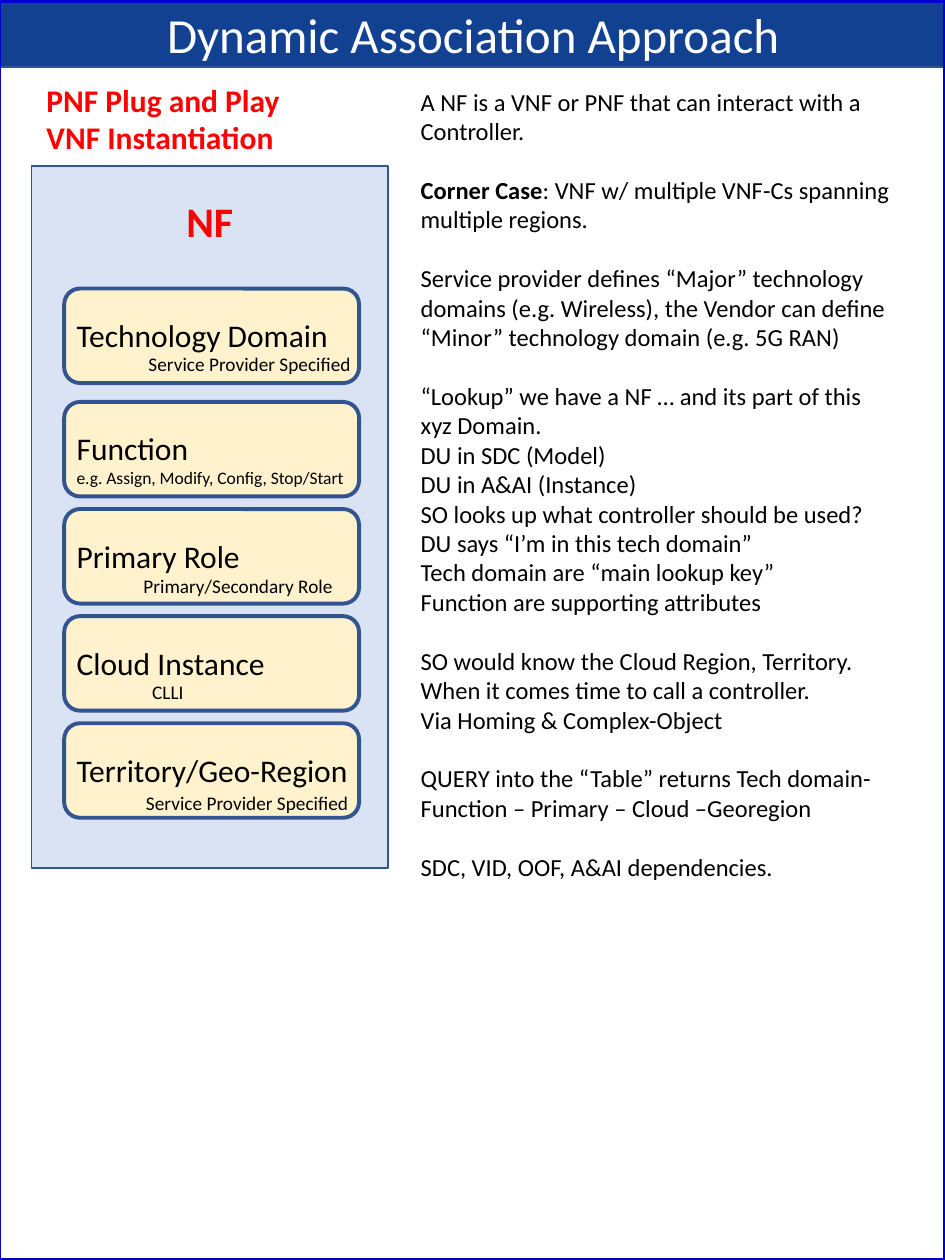
"""Build the Dynamic Association Approach slide."""
from pptx import Presentation
from pptx.dml.color import RGBColor
from pptx.enum.shapes import MSO_SHAPE
from pptx.enum.text import MSO_AUTO_SIZE, PP_ALIGN
from pptx.util import Inches, Pt

RECT, ROUNDED = MSO_SHAPE.RECTANGLE, MSO_SHAPE.ROUNDED_RECTANGLE
LEFT, CENTER = PP_ALIGN.LEFT, PP_ALIGN.CENTER
FIT = MSO_AUTO_SIZE.SHAPE_TO_FIT_TEXT
WHITE = RGBColor(0xFF, 0xFF, 0xFF)
BLACK = RGBColor(0, 0, 0)
RED = RGBColor(0xFF, 0, 0)
BANNER = RGBColor(0x12, 0x41, 0x92)
OUTLINE = RGBColor(0x32, 0x54, 0x91)
BORDER = RGBColor(0, 0, 0xCC)
PANEL = RGBColor(0xDA, 0xE3, 0xF3)
CREAM = RGBColor(0xFF, 0xF2, 0xCC)
FONT = "Calibri"
NOTE_GAP = 16.8

TITLE = "Dynamic Association Approach"
HEADING = [["PNF Plug and Play"], ["VNF Instantiation"]]

# label, label width, detail, detail left, detail width, detail offset, detail size
ATTRIBUTES = [
    ("Technology Domain", 2.22, "Service Provider Specified", 1.08, 1.82, 0.46, 11),
    ("Function", 1.1, "e.g. Assign, Modify, Config, Stop/Start", 0.51, 2.34, 0.47, 10),
    ("Primary Role", 1.51, "Primary/Secondary Role", 1.04, 1.71, 0.47, 11),
    ("Cloud Instance", 1.71, "CLLI", 1.11, 0.45, 0.46, 11),
    ("Territory/Geo-Region", 2.38, "Service Provider Specified", 1.06, 1.82, 0.49, 11),
]
BOX_LEFT, BOX_W, BOX_H = 0.51, 2.34, 0.75
FIRST_TOP, SECOND_TOP, PITCH = 2.29, 3.19, 0.85

NOTES = [
    [["A NF is a VNF or PNF that can interact with a Controller."]],
    [["Corner Case", ": VNF w/ multiple VNF-Cs spanning multiple regions."]],
    [["Service provider defines “Major” technology domains (e.g. Wireless), "
      "the Vendor can define “Minor” technology domain (e.g. 5G RAN)"]],
    [["“Lookup” we have a NF … and its part of this xyz Domain."],
     ["DU in SDC (Model)"],
     ["DU in A&AI (Instance)"],
     ["SO looks up what controller should be used?"],
     ["DU says “I’m in this tech domain”"],
     ["Tech domain are “main lookup key”"],
     ["Function are supporting attributes"]],
    [["SO would know the Cloud Region, Territory."],
     ["When it comes time to call a controller."],
     ["Via Homing & Complex-Object"]],
    [["QUERY into the “Table” returns Tech domain-Function – Primary – Cloud –Georegion"]],
    [["SDC, VID, OOF, A&AI dependencies."]],
]


def add_box(s, kind, x, y, w, h, fill, line, weight):
    sp = s.shapes.add_shape(kind, Inches(x), Inches(y), Inches(w), Inches(h))
    sp.shadow.inherit = False
    if fill is None:
        sp.fill.background()
    else:
        sp.fill.solid()
        sp.fill.fore_color.rgb = fill
    sp.line.color.rgb = line
    sp.line.width = Pt(weight)


def add_text(s, x, y, w, h, groups, size, color=BLACK, bold=False,
             wrap=False, align=LEFT, gap=0):
    tf = s.shapes.add_textbox(Inches(x), Inches(y), Inches(w), Inches(h)).text_frame
    tf.word_wrap = wrap
    tf.auto_size = FIT
    p = None
    for number, group in enumerate(groups):
        for row, runs in enumerate(group):
            p = tf.paragraphs[0] if p is None else tf.add_paragraph()
            p.alignment = align
            if number and row == 0:
                p.space_before = Pt(gap)
            for i, text in enumerate(runs):
                r = p.add_run()
                r.text = text
                r.font.name = FONT
                r.font.size = Pt(size)
                r.font.bold = bold or (len(runs) > 1 and i == 0)
                r.font.color.rgb = color


def main():
    prs = Presentation()
    prs.slide_width, prs.slide_height = Inches(7.5), Inches(10)
    s = prs.slides.add_slide(prs.slide_layouts[6])

    add_box(s, RECT, 0, 0.01, 7.5, 0.52, BANNER, OUTLINE, 1)
    add_text(s, 1.13, -0.01, 5.25, 0.57, [[[TITLE]]], 28, WHITE, align=CENTER)
    add_box(s, RECT, -0.01, 0.01, 7.51, 9.99, None, BORDER, 2.25)
    add_text(s, 3.24, 0.64, 3.98, 6.7, NOTES, 14, wrap=True, gap=NOTE_GAP)
    add_text(s, 0.27, 0.59, 2.72, 0.71, [HEADING], 18, RED, True, wrap=True)

    add_box(s, RECT, 0.25, 1.32, 2.83, 5.57, PANEL, OUTLINE, 1)
    add_text(s, 1.38, 1.5, 0.58, 0.5, [[["NF"]]], 24, RED, True)
    for i, (label, label_w, detail, x, w, offset, size) in enumerate(ATTRIBUTES):
        top = SECOND_TOP + (i - 1) * PITCH if i else FIRST_TOP
        add_box(s, ROUNDED, BOX_LEFT, top, BOX_W, BOX_H, CREAM, OUTLINE, 2.25)
        add_text(s, BOX_LEFT, top + 0.17, label_w, 0.4, [[[label]]], 18)
        add_text(s, x, top + offset, w, 0.29, [[[detail]]], size)

    prs.save("out.pptx")


if __name__ == "__main__":
    main()
